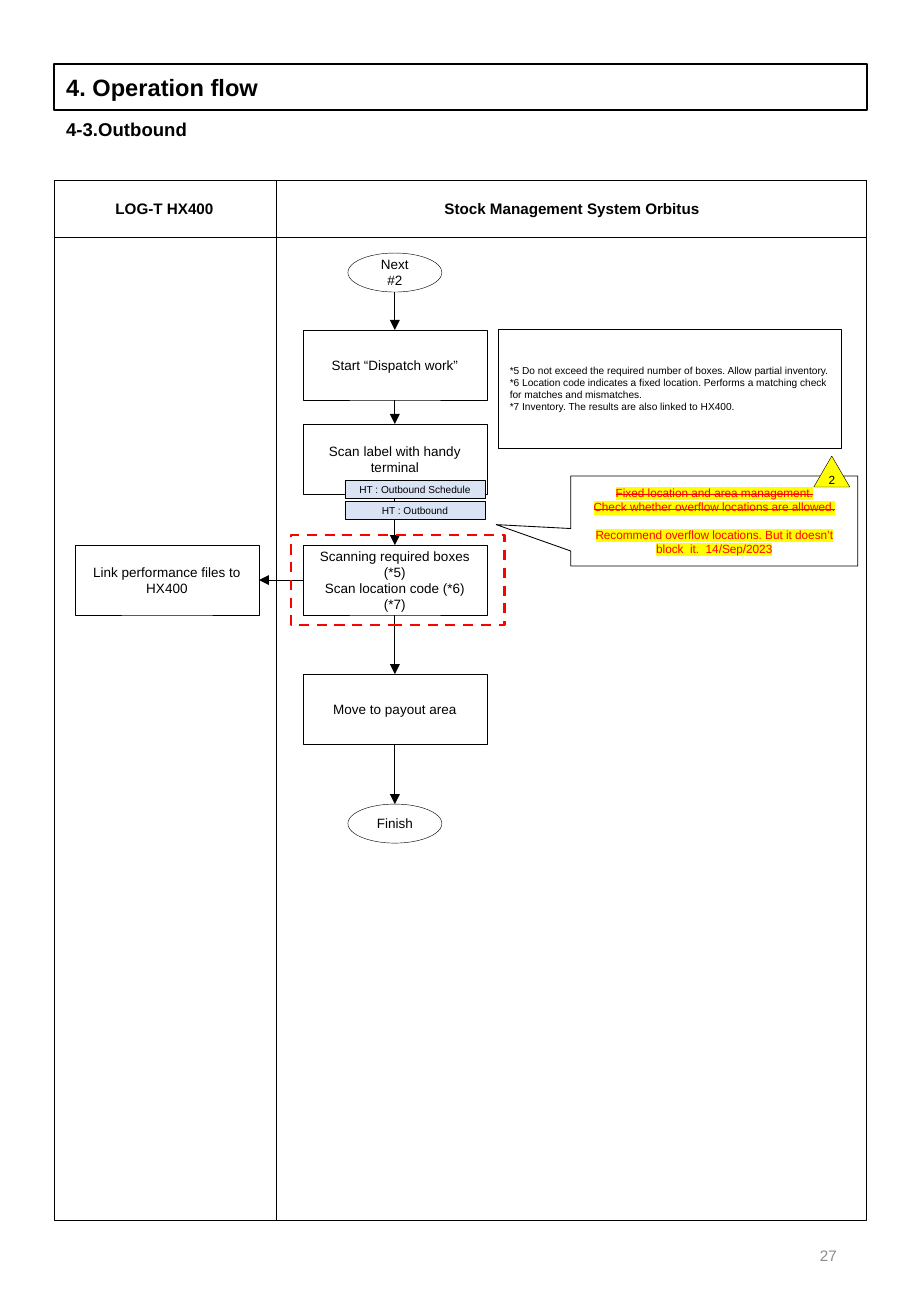
from dataclasses import dataclass
from itertools import pairwise

from lxml.etree import SubElement
from pptx import Presentation
from pptx.dml.color import RGBColor
from pptx.enum.dml import MSO_LINE_DASH_STYLE as Dash
from pptx.enum.shapes import MSO_CONNECTOR as Link, MSO_SHAPE as Preset
from pptx.enum.text import MSO_ANCHOR as Anchor, MSO_AUTO_SIZE as Fit, PP_ALIGN as Align
from pptx.oxml import parse_xml
from pptx.oxml.ns import nsdecls, qn
from pptx.util import Inches, Pt

# Content
TITLE = "4. Operation flow"
SUBTITLE = "4-3.Outbound"
LANES = ["LOG-T HX400", "Stock Management System Orbitus"]
FLOW = [  # preset, top, paragraphs
    (Preset.OVAL, 253, ["Next #2"]),
    (Preset.RECTANGLE, 330, ["Start “Dispatch work”"]),
    (Preset.RECTANGLE, 424, ["Scan label with handy terminal"]),
    (Preset.RECTANGLE, 545, ["Scanning required boxes (*5)", "Scan location code (*6)(*7)"]),
    (Preset.RECTANGLE, 674, ["Move to payout area"]),
    (Preset.OVAL, 804, ["Finish"]),
]
SCAN_STEP = 3
LINKED_STEP = ["Link performance files to HX400"]
NOTES = [
    "*5 Do not exceed the required number of boxes. Allow partial inventory.",
    "*6 Location code indicates a fixed location. Performs a matching check for matches and mismatches.",
    "*7 Inventory. The results are also linked to HX400.",
]
SCREENS = ["HT : Outbound Schedule", "HT : Outbound"]
WITHDRAWN = ["Fixed location and area management.", "Check whether overflow locations are allowed."]
REVISION = "Recommend overflow locations. But it doesn’t block  it.  14/Sep/2023"
REVISION_NO = "2"
PAGE_NO = "27"


@dataclass(frozen=True)
class Theme:
    font: str = "Arial"
    ink: str = "000000"
    paper: str = "FFFFFF"
    alert: str = "FF0000"
    marker: str = "FFFF00"
    screen: str = "DAE3F3"
    muted: str = "8C8C8C"
    title: int = 14
    subtitle: int = 11
    lane: int = 9
    step: int = 8
    revision: int = 7
    small: int = 6
    hairline: float = 0.25
    thin: float = 0.5


THEME = Theme()

# Geometry in px
PX = 914400 / 121.5
LEFT, WIDTH = 54, 813
TOP, HEAD_H, FRAME_H = 180, 57, 1040
DIVIDER = 277
AXIS = 395
SIZES = {Preset.OVAL: (94, 39), Preset.RECTANGLE: (184, 70)}
SCREEN_TOP, SCREEN_PITCH = 480, 21


def emu(*lengths):
    return [round(length * PX) for length in lengths]


deck = Presentation()
deck.slide_width, deck.slide_height = Inches(7.5), Inches(10.83)
slide = deck.slides.add_slide(deck.slide_layouts[1])


def write(holder, paragraphs, size, color=THEME.ink, bold=False, align=Align.CENTER, anchor=Anchor.MIDDLE):
    frame = holder.text_frame
    frame.word_wrap = True
    frame.auto_size = Fit.NONE
    frame.vertical_anchor = anchor
    for i, text in enumerate(paragraphs):
        paragraph = frame.paragraphs[0] if i == 0 else frame.add_paragraph()
        paragraph.alignment = align
        paragraph.space_before = Pt(0)
        run = paragraph.add_run()
        run.text = text
        font = run.font
        font.name, font.size, font.bold = THEME.font, Pt(size), bold
        font.color.rgb = RGBColor.from_string(color)
    return frame


def outline(line, color=THEME.ink, width=THEME.hairline):
    line.color.rgb = RGBColor.from_string(color)
    line.width = Pt(width)


def place(holder, box):
    holder.left, holder.top, holder.width, holder.height = emu(*box)


def add_box(preset, box, fill=None, color=THEME.ink, width=THEME.hairline):
    shape = slide.shapes.add_shape(preset, *emu(*box))
    shape.shadow.inherit = False
    if fill:
        shape.fill.solid()
        shape.fill.fore_color.rgb = RGBColor.from_string(fill)
    else:
        shape.fill.background()
    outline(shape.line, color, width)
    return shape


def add_line(*ends):
    line = slide.shapes.add_connector(Link.STRAIGHT, *emu(*ends))
    outline(line.line, width=THEME.thin)
    SubElement(line._element.spPr, qn("a:effectLst"))
    return line


def add_arrow(source, source_side, target, target_side, start=(0, 0)):
    arrow = add_line(*start, *start)
    if source.auto_shape_type == Preset.RECTANGLE:
        arrow.begin_connect(source, source_side)
    arrow.end_connect(target, target_side)
    SubElement(arrow.line._get_or_add_ln(), qn("a:tailEnd"), type="triangle")


def add_label(box, text, size, **style):
    write(slide.shapes.add_textbox(*emu(*box)), [text], size, **style)


# Title and subtitle
title, subtitle = slide.placeholders
place(title, (LEFT, 64, WIDTH, 46))
outline(title.line, width=1)
write(title, [TITLE], THEME.title, bold=True, align=Align.LEFT)
place(subtitle, (LEFT, 112, WIDTH, 35))
heading = write(subtitle, [SUBTITLE], THEME.subtitle, bold=True, align=Align.LEFT, anchor=Anchor.TOP)
bulletless = heading.paragraphs[0]._p.get_or_add_pPr()
bulletless.set("marL", "0")
bulletless.set("indent", "0")
SubElement(bulletless, qn("a:buNone"))

# Swim lanes
for height in (FRAME_H, HEAD_H):
    add_box(Preset.RECTANGLE, (LEFT, TOP, WIDTH, height))
add_line(DIVIDER, TOP, DIVIDER, TOP + FRAME_H)
lane_edges = [LEFT - 2, DIVIDER, LEFT + WIDTH]
for lane, (start, end) in zip(LANES, pairwise(lane_edges)):
    add_label((start, TOP, end - start, HEAD_H), lane, THEME.lane, bold=True)

# Flow steps and arrows
steps = []
for preset, top, words in FLOW:
    width, height = SIZES[preset]
    step = add_box(preset, (AXIS - width / 2, top, width, height))
    write(step, words, THEME.step)
    steps.append(step)
for (upper, lower), (preset, top, _) in zip(pairwise(steps), FLOW):
    add_arrow(upper, 2, lower, 0, start=(AXIS, top + SIZES[preset][1]))

# Step in the host lane
host_step = add_box(Preset.RECTANGLE, (75, FLOW[SCAN_STEP][1], *SIZES[Preset.RECTANGLE]))
write(host_step, LINKED_STEP, THEME.step)
add_arrow(steps[SCAN_STEP], 1, host_step, 3)

# Changed area and handheld screens
changed_area = add_box(Preset.RECTANGLE, (291, 535, 214, 90), color=THEME.alert, width=1.5)
changed_area.line.dash_style = Dash.DASH
for i, screen in enumerate(SCREENS):
    tag = add_box(Preset.RECTANGLE, (345, SCREEN_TOP + i * SCREEN_PITCH, 140, 18), fill=THEME.screen)
    write(tag, [screen], THEME.small)

# Notes
notes = add_box(Preset.RECTANGLE, (498, 329, 344, 119), fill=THEME.paper)
write(notes, NOTES, THEME.small, align=Align.LEFT)

# Revision callout
callout = add_box(Preset.RECTANGULAR_CALLOUT, (571, 476, 287, 90), width=THEME.thin)
callout.adjustments[0], callout.adjustments[1] = -0.76, 0.04
revision = write(callout, [*WITHDRAWN, REVISION], THEME.revision, color=THEME.alert)
revision.paragraphs[-1].space_before = Pt(8)
for i, paragraph in enumerate(revision.paragraphs):
    props = paragraph.runs[0].font._element
    props.find(qn("a:solidFill")).addnext(parse_xml(
        f'<a:highlight {nsdecls("a")}><a:srgbClr val="{THEME.marker}"/></a:highlight>'))
    if i < len(WITHDRAWN):
        props.set("strike", "sngStrike")

badge = add_box(Preset.ISOSCELES_TRIANGLE, (814, 456, 36, 31), fill=THEME.marker)
mark = write(badge, [REVISION_NO], THEME.revision)
mark.margin_left = mark.margin_right = mark.margin_top = mark.margin_bottom = 0

# Page number
add_label((644, 1220, 205, 70), PAGE_NO, THEME.lane, color=THEME.muted, align=Align.RIGHT)

deck.save("out.pptx")
